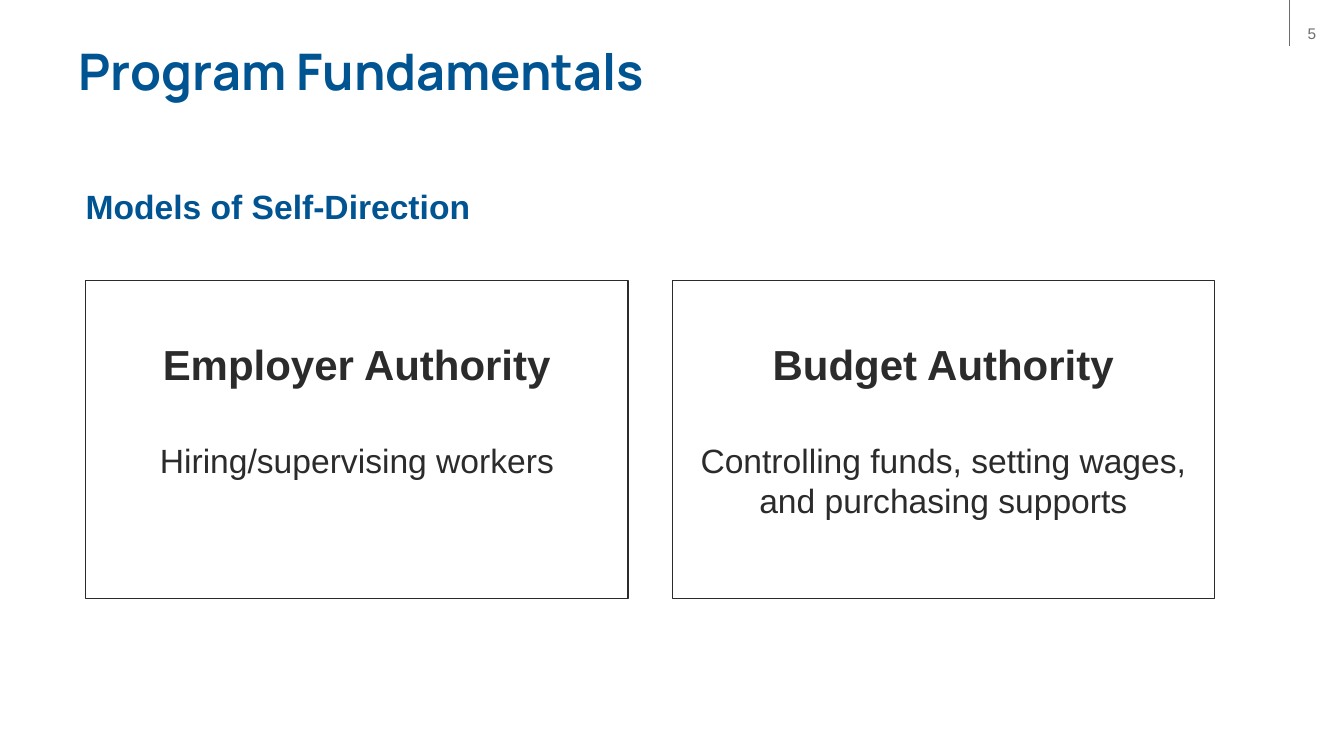
from pptx import Presentation
from pptx.util import Pt
from pptx.dml.color import RGBColor
from pptx.enum.shapes import MSO_CONNECTOR
from pptx.enum.text import PP_ALIGN, MSO_ANCHOR, MSO_AUTO_SIZE
from pptx.oxml.ns import qn
from lxml.etree import SubElement

COLORS = {"blue": "005492", "ink": "2B2B2B", "gray": "6D6D6D"}
TITLE = "Program Fundamentals"
SUBTITLE = "Models of Self-Direction"
PAGE = "5"
CARDS = [
    (2, "Employer Authority", "Hiring/supervising workers"),
    (4, "Budget Authority", "Controlling funds, setting wages, and purchasing supports"),
]
UNUSED = 3

TITLE_FONT = {"name": "Manrope", "size": Pt(36), "bold": True}
SUBTITLE_FONT = {"name": "Arial", "size": Pt(24), "bold": True}
HEADING_FONT = {"name": "Arial", "size": Pt(30), "bold": True}
DETAIL_FONT = {"name": "Arial", "size": Pt(24), "bold": False}
PAGE_FONT = {"name": "Arial", "size": Pt(11), "bold": False}

LEFT, CARD_TOP, CARD_W, CARD_H, CARD_GAP = 61.2, 200.2, 387.4, 227.5, 31.5
CARD_INSET, DETAIL_GAP = 41.5, 36.5
PAGE_X = 920.9


def rgb(name):
    return RGBColor.from_string(COLORS[name])


def place(sp, x, y, w, h, anchor=MSO_ANCHOR.TOP, inset=0):
    sp.left, sp.top, sp.width, sp.height = Pt(x), Pt(y), Pt(w), Pt(h)
    tf = sp.text_frame
    frame = {"margin_left": 0, "margin_right": 0, "margin_top": Pt(inset),
             "margin_bottom": 0, "word_wrap": True,
             "auto_size": MSO_AUTO_SIZE.NONE, "vertical_anchor": anchor}
    for key, value in frame.items():
        setattr(tf, key, value)
    return tf


def write(p, text, font, color, align=PP_ALIGN.LEFT, before=0, spacing=1.0):
    layout = {"alignment": align, "space_before": Pt(before),
              "space_after": Pt(0), "line_spacing": spacing}
    for key, value in layout.items():
        setattr(p, key, value)
    pPr = p._p.get_or_add_pPr()
    pPr.set("marL", "0")
    pPr.set("indent", "0")
    SubElement(pPr, qn("a:buNone"))
    r = p.add_run()
    r.text = text
    for key, value in font.items():
        setattr(r.font, key, value)
    r.font.color.rgb = rgb(color)


def main():
    prs = Presentation()
    prs.slide_width, prs.slide_height = Pt(960), Pt(540)
    s = prs.slides.add_slide(prs.slide_layouts.get_by_name("Comparison"))
    holders = {sp.placeholder_format.idx: sp for sp in s.placeholders}

    tf = place(holders[0], 56.2, 17.3, 819.4, 72, MSO_ANCHOR.MIDDLE)
    write(tf.paragraphs[0], TITLE, TITLE_FONT, "blue", spacing=0.9)

    tf = place(holders[1], LEFT, 136.1, 838.1, 38.2)
    write(tf.paragraphs[0], SUBTITLE, SUBTITLE_FONT, "blue", spacing=0.9)

    for i, (idx, heading, detail) in enumerate(CARDS):
        sp = holders[idx]
        tf = place(sp, LEFT + i * (CARD_W + CARD_GAP), CARD_TOP,
                   CARD_W, CARD_H, inset=CARD_INSET)
        sp.line.color.rgb = rgb("ink")
        sp.line.width = Pt(0.75)
        write(tf.paragraphs[0], heading, HEADING_FONT, "ink", PP_ALIGN.CENTER)
        write(tf.add_paragraph(), detail, DETAIL_FONT, "ink",
              PP_ALIGN.CENTER, DETAIL_GAP)

    unused = holders[UNUSED].element
    unused.getparent().remove(unused)

    rule = s.shapes.add_connector(MSO_CONNECTOR.STRAIGHT,
                                  Pt(PAGE_X), Pt(0), Pt(PAGE_X), Pt(32.6))
    rule.line.color.rgb = rgb("gray")
    rule.line.width = Pt(0.75)
    SubElement(rule._element.spPr, qn("a:effectLst"))

    tf = place(s.shapes.add_textbox(0, 0, 0, 0), PAGE_X, 17.3, 32.4, 19.4)
    write(tf.paragraphs[0], PAGE, PAGE_FONT, "gray", PP_ALIGN.CENTER)

    prs.save("out.pptx")


if __name__ == "__main__":
    main()
